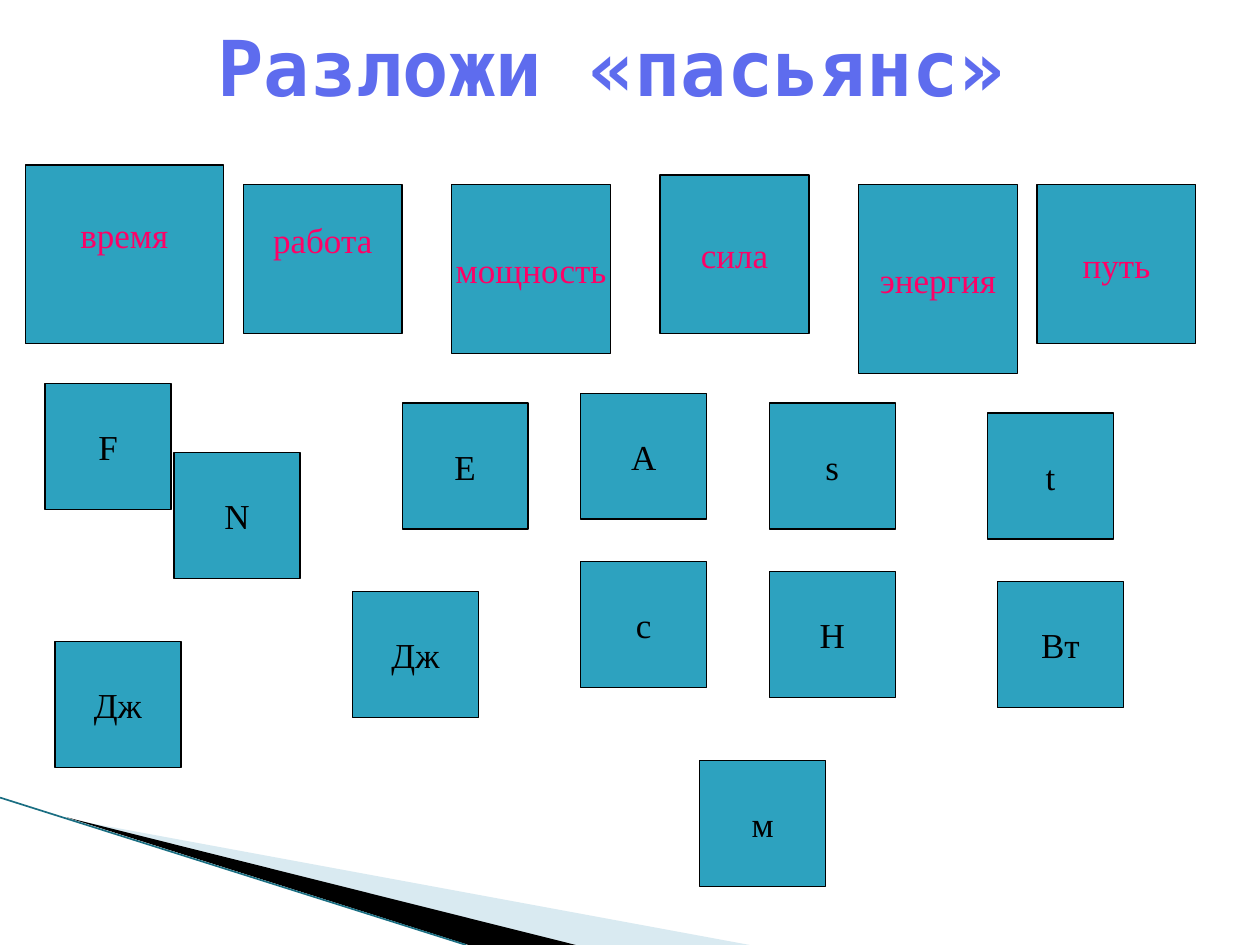
"""Build the "Разложи «пасьянс»" slide: physics cards to be matched on a 2 mm grid."""

from typing import Any, NamedTuple

import lxml.etree
import pptx
import pptx.dml.color
import pptx.enum.shapes
import pptx.enum.text
import pptx.oxml.ns
import pptx.util

RGBColor = pptx.dml.color.RGBColor
WHITE = RGBColor(0xFF, 0xFF, 0xFF)
BLACK = RGBColor(0x00, 0x00, 0x00)
CARD_TEAL = RGBColor(0x2D, 0xA2, 0xBF)
WORD_PINK = RGBColor(0xFF, 0x00, 0x66)
TITLE_BLUE = RGBColor(0x5E, 0x6C, 0xEE)
PALE_BLUE = RGBColor(0xA0, 0xCB, 0xDC)
EDGE_TEAL = RGBColor(0x1A, 0x6E, 0x82)

WIDTH, HEIGHT = pptx.util.Inches(10), pptx.util.Inches(7.5)
GRID = pptx.util.Cm(0.2)
GRID_LEFT, GRID_TOP = pptx.util.Inches(0.2), pptx.util.Inches(1.31)
RAISED_INSET = pptx.util.Inches(0.37)

CARD_FRAME = {
    "word_wrap": False,
    "vertical_anchor": pptx.enum.text.MSO_ANCHOR.MIDDLE,
}
CARD_FONT = {"name": "Times New Roman", "size": pptx.util.Pt(20)}
TITLE_PLACE = {
    "left": round(0.059 * WIDTH),
    "top": 0,
    "width": round(0.89 * WIDTH),
    "height": round(0.14 * HEIGHT),
}
TITLE_FRAME = {
    "vertical_anchor": pptx.enum.text.MSO_ANCHOR.MIDDLE,
    "auto_size": pptx.enum.text.MSO_AUTO_SIZE.NONE,
    "word_wrap": True,
}
TITLE_FONT = {"name": "DejaVu Sans Mono", "size": pptx.util.Pt(44), "bold": True}


class Card(NamedTuple):
    """A card placed by grid column and row, with its size in grid steps."""

    label: str
    column: int
    row: int
    columns: float = 12.7
    rows: float = 12.7
    color: RGBColor = BLACK
    raised: bool = False


class Wedge(NamedTuple):
    """A filled outline whose corners are shares of the slide's size."""

    corners: list[tuple[float, float]]
    color: RGBColor
    opacity: int = 100


QUANTITIES = [
    Card("время", 0, 0, 20, 18, WORD_PINK, True),
    Card("работа", 22, 2, 16, 15, WORD_PINK, True),
    Card("мощность", 43, 2, 16, 17, WORD_PINK),
    Card("сила", 64, 1, 15, 16, WORD_PINK),
    Card("путь", 102, 2, 16, 16, WORD_PINK),
    Card("энергия", 84, 2, 16, 19, WORD_PINK),
]
SYMBOLS = [
    Card("F", 2, 22),
    Card("N", 15, 29),
    Card("E", 38, 24),
    Card("A", 56, 23),
    Card("s", 75, 24),
    Card("t", 97, 25),
]
UNITS = [
    Card("Дж", 3, 48),
    Card("Дж", 33, 43),
    Card("с", 56, 40),
    Card("Н", 75, 41),
    Card("Вт", 98, 42),
    Card("м", 68, 60),
]
WEDGES = [
    Wedge([(0.055, 0.867), (0.595, 1), (0.456, 1)], PALE_BLUE, 40),
    Wedge([(0.053, 0.865), (0.457, 1), (0.372, 1)], BLACK),
]


def apply_format(target: Any, values: dict[str, Any]) -> None:
    """Set every attribute named in the format values."""
    for attribute, value in values.items():
        setattr(target, attribute, value)


def draw_wedge(slide: pptx.slide.Slide, wedge: Wedge) -> None:
    """Draw one sliver of the corner decoration."""
    start, *others = [(round(x * WIDTH), round(y * HEIGHT)) for x, y in wedge.corners]
    builder = slide.shapes.build_freeform(*start)
    builder.add_line_segments(others, close=True)
    sliver = builder.convert_to_shape()
    sliver.shadow.inherit = False
    sliver.fill.solid()
    sliver.fill.fore_color.rgb = wedge.color
    sliver.line.fill.background()
    if wedge.opacity < 100:
        tint = sliver._element.spPr.find(".//" + pptx.oxml.ns.qn("a:srgbClr"))
        alpha = lxml.etree.SubElement(tint, pptx.oxml.ns.qn("a:alpha"))
        alpha.set("val", str(wedge.opacity * 1000))


def draw_edge(slide: pptx.slide.Slide) -> None:
    """Draw the thin line along the lower side of the decoration."""
    edge = slide.shapes.add_connector(
        pptx.enum.shapes.MSO_CONNECTOR.STRAIGHT,
        0, round(0.844 * HEIGHT), round(0.37 * WIDTH), HEIGHT,
    )
    edge.line.color.rgb = EDGE_TEAL
    edge.line.width = pptx.util.Pt(0.95)
    lxml.etree.SubElement(edge._element.spPr, pptx.oxml.ns.qn("a:effectLst"))


def draw_card(slide: pptx.slide.Slide, card: Card) -> None:
    """Draw one labelled card on the grid."""
    tile = slide.shapes.add_shape(
        pptx.enum.shapes.MSO_SHAPE.RECTANGLE,
        GRID_LEFT + card.column * GRID,
        GRID_TOP + card.row * GRID,
        round(card.columns * GRID),
        round(card.rows * GRID),
    )
    tile.shadow.inherit = False
    tile.fill.solid()
    tile.fill.fore_color.rgb = CARD_TEAL
    tile.line.color.rgb = BLACK
    tile.line.width = pptx.util.Pt(0.75)
    apply_format(tile.text_frame, CARD_FRAME)
    if card.raised:
        tile.text_frame.margin_bottom = RAISED_INSET
    write_label(tile.text_frame, card.label, CARD_FONT, card.color)


def write_label(
    frame: pptx.text.text.TextFrame, label: str, font: dict[str, Any], color: RGBColor
) -> None:
    """Write one centred line in the given font and colour."""
    line = frame.paragraphs[0]
    line.alignment = pptx.enum.text.PP_ALIGN.CENTER
    run = line.add_run()
    run.text = label
    apply_format(run.font, font)
    run.font.color.rgb = color


def main() -> None:
    """Assemble and save the slide."""
    deck = pptx.Presentation()
    apply_format(deck, {"slide_width": WIDTH, "slide_height": HEIGHT})
    slide = deck.slides.add_slide(deck.slide_layouts[5])
    slide.background.fill.solid()
    slide.background.fill.fore_color.rgb = WHITE

    for wedge in WEDGES:
        draw_wedge(slide, wedge)
    draw_edge(slide)
    for card in QUANTITIES + SYMBOLS + UNITS:
        draw_card(slide, card)

    title = slide.shapes.title
    apply_format(title, TITLE_PLACE)
    apply_format(title.text_frame, TITLE_FRAME)
    write_label(title.text_frame, "Разложи «пасьянс» ", TITLE_FONT, TITLE_BLUE)
    deck.save("out.pptx")


if __name__ == "__main__":
    main()
